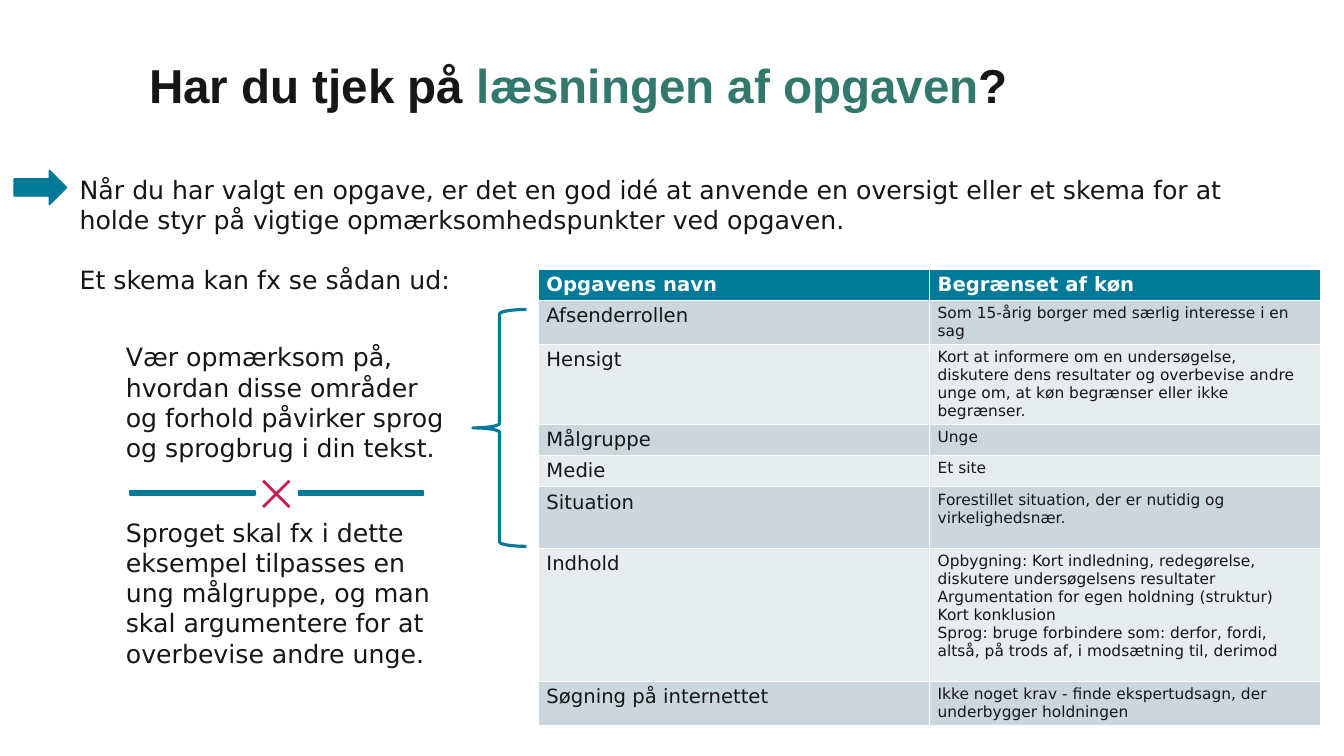
from dataclasses import dataclass

from lxml import etree
from pptx import Presentation, util as u
from pptx.dml.color import RGBColor
from pptx.enum import shapes, text
from pptx.oxml.ns import qn

PX = 9144  # EMU in one px, 100 px to the inch


@dataclass(frozen=True)
class Theme:
    ink: str = "161616"
    white: str = "FFFFFF"
    teal: str = "007A98"
    green: str = "33786D"
    pink: str = "C31F59"
    bands: tuple = ("CCD7DD", "E7ECEF")
    title_font: str = "Arial"
    body_font: str = "DejaVu Sans"
    title: int = 34
    body: int = 18
    label: int = 14
    cell: int = 11


T = Theme()
TITLE = [("Har du tjek på ", T.ink), ("læsningen af opgaven", T.green), ("?", T.ink)]
INTRO = [
    "Når du har valgt en opgave, er det en god idé at anvende en oversigt "
    "eller et skema for at holde styr på vigtige opmærksomhedspunkter ved opgaven.",
    "Et skema kan fx se sådan ud:",
]
NOTICE = ("Vær opmærksom på, hvordan disse områder og forhold påvirker sprog "
          "og sprogbrug i din tekst.")
EXAMPLE = ("Sproget skal fx i dette eksempel tilpasses en ung målgruppe, og man "
           "skal argumentere for at overbevise andre unge.")
# Row height, label, paragraphs of the right cell
SCHEMA = [
    (30, "Opgavens navn", ["Begrænset af køn"]),
    (44, "Afsenderrollen", ["Som 15-årig borger med særlig interesse i en sag"]),
    (78, "Hensigt", ["Kort at informere om en undersøgelse, diskutere dens resultater og "
                     "overbevise andre unge om, at køn begrænser eller ikke begrænser."]),
    (30, "Målgruppe", ["Unge"]),
    (31, "Medie", ["Et site"]),
    (61, "Situation", ["Forestillet situation, der er nutidig og virkelighedsnær."]),
    (132, "Indhold", ["Opbygning: Kort indledning, redegørelse, diskutere undersøgelsens "
                      "resultater Argumentation for egen holdning (struktur)",
                      "Kort konklusion",
                      "Sprog: bruge forbindere som: derfor, fordi, altså, på trods af, "
                      "i modsætning til, derimod"]),
    (42, "Søgning på internettet", ["Ikke noget krav - finde ekspertudsagn, "
                                    "der underbygger holdningen"]),
]


def rgb(color):
    return RGBColor.from_string(color)


def emu(*lengths):
    return [n * PX for n in lengths]


def place(sp, *box):
    sp.left, sp.top, sp.width, sp.height = emu(*box)


def set_insets(frame, x, y):
    frame.margin_left = frame.margin_right = x * PX
    frame.margin_top = frame.margin_bottom = y * PX


def add_run(p, words, size, color=T.ink, font=T.body_font, bold=False):
    r = p.add_run()
    r.text = words
    r.font.name, r.font.size, r.font.bold = font, u.Pt(size), bold
    r.font.color.rgb = rgb(color)


def fill_paragraphs(tf, lines, size, **style):
    for i, line in enumerate(lines):
        p = tf.add_paragraph() if i else tf.paragraphs[0]
        add_run(p, line, size, **style)


def set_title(sp):
    place(sp, 148, 65, 1054, 37)
    tf = sp.text_frame
    set_insets(tf, 0, 0)
    tf.vertical_anchor = text.MSO_ANCHOR.TOP
    tf.auto_size = text.MSO_AUTO_SIZE.NONE
    p = tf.paragraphs[0]
    p.alignment, p.line_spacing = text.PP_ALIGN.LEFT, 0.83
    for words, color in TITLE:
        add_run(p, words, T.title, color, T.title_font, True)


def set_intro(sp):
    place(sp, 66, 166, 1212, 154)
    tf = sp.text_frame
    set_insets(tf, 13, 7)
    tf.auto_size = text.MSO_AUTO_SIZE.NONE
    fill_paragraphs(tf, INTRO, T.body)
    for i, p in enumerate(tf.paragraphs):
        pPr = p._p.get_or_add_pPr()
        pPr.set("marL", "0")
        pPr.set("indent", "0")
        etree.SubElement(pPr, qn("a:buNone"))
        p.space_before = u.Pt(21 if i else 0)


def add_text(s, words, *box):
    tf = s.shapes.add_textbox(*emu(*box)).text_frame
    tf.word_wrap = True
    fill_paragraphs(tf, [words], T.body)


def add_solid(s, kind, *box):
    sp = s.shapes.add_shape(kind, *emu(*box))
    sp.shadow.inherit = False
    sp.fill.solid()
    sp.fill.fore_color.rgb = sp.line.color.rgb = rgb(T.teal)
    sp.line.width = u.Pt(1)


def add_brace(s, *box):
    sp = s.shapes.add_shape(shapes.MSO_SHAPE.LEFT_BRACE, *emu(*box))
    sp.shadow.inherit = False
    sp.fill.background()
    sp.line.color.rgb = rgb(T.teal)
    sp.line.width = u.Pt(2.25)


def add_cross(s, cx, cy, reach, thick):
    """Draw a diagonal cross by turning one arm a quarter at a time."""
    arm = [(0, -thick), (reach - thick, -reach), (reach, thick - reach)]
    points = []
    for _ in range(4):
        points += [(cx + x, cy + y) for x, y in arm]
        arm = [(-y, x) for x, y in arm]
    outline = s.shapes.build_freeform(*points[0], scale=PX)
    outline.add_line_segments(points[1:])
    sp = outline.convert_to_shape()
    sp.shadow.inherit = False
    sp.fill.solid()
    sp.fill.fore_color.rgb = rgb(T.pink)
    sp.line.fill.background()


def add_schema(s, left, top, col_width):
    height = sum(row[0] for row in SCHEMA)
    table = s.shapes.add_table(len(SCHEMA), 2, *emu(left, top, 2 * col_width, height)).table
    for col in table.columns:
        col.width = col_width * PX
    for i, (row_height, label, details) in enumerate(SCHEMA):
        table.rows[i].height = row_height * PX
        header = i == 0
        for j, lines in enumerate(([label], details)):
            cell = table.cell(i, j)
            set_insets(cell, 8, 4)
            cell.fill.solid()
            cell.fill.fore_color.rgb = rgb(T.teal if header else T.bands[(i - 1) % 2])
            fill_paragraphs(cell.text_frame, lines, T.label if header or j == 0 else T.cell,
                            color=T.white if header else T.ink, bold=header)


def main():
    prs = Presentation()
    prs.slide_width, prs.slide_height = emu(1333, 750)
    s = prs.slides.add_slide(prs.slide_layouts[1])
    set_title(s.shapes.title)
    set_intro(s.placeholders[1])
    add_solid(s, shapes.MSO_SHAPE.RIGHT_ARROW, 14, 169, 52, 34)
    add_schema(s, 534, 267, 388)
    add_brace(s, 469, 307, 53, 235)
    add_text(s, NOTICE, 115, 334, 340, 131)
    for left in (129, 296):
        add_solid(s, shapes.MSO_SHAPE.RECTANGLE, left, 487, 124, 4)
    add_cross(s, 274, 490, 14, 2)
    add_text(s, EXAMPLE, 115, 508, 352, 162)
    prs.save("out.pptx")


if __name__ == "__main__":
    main()
